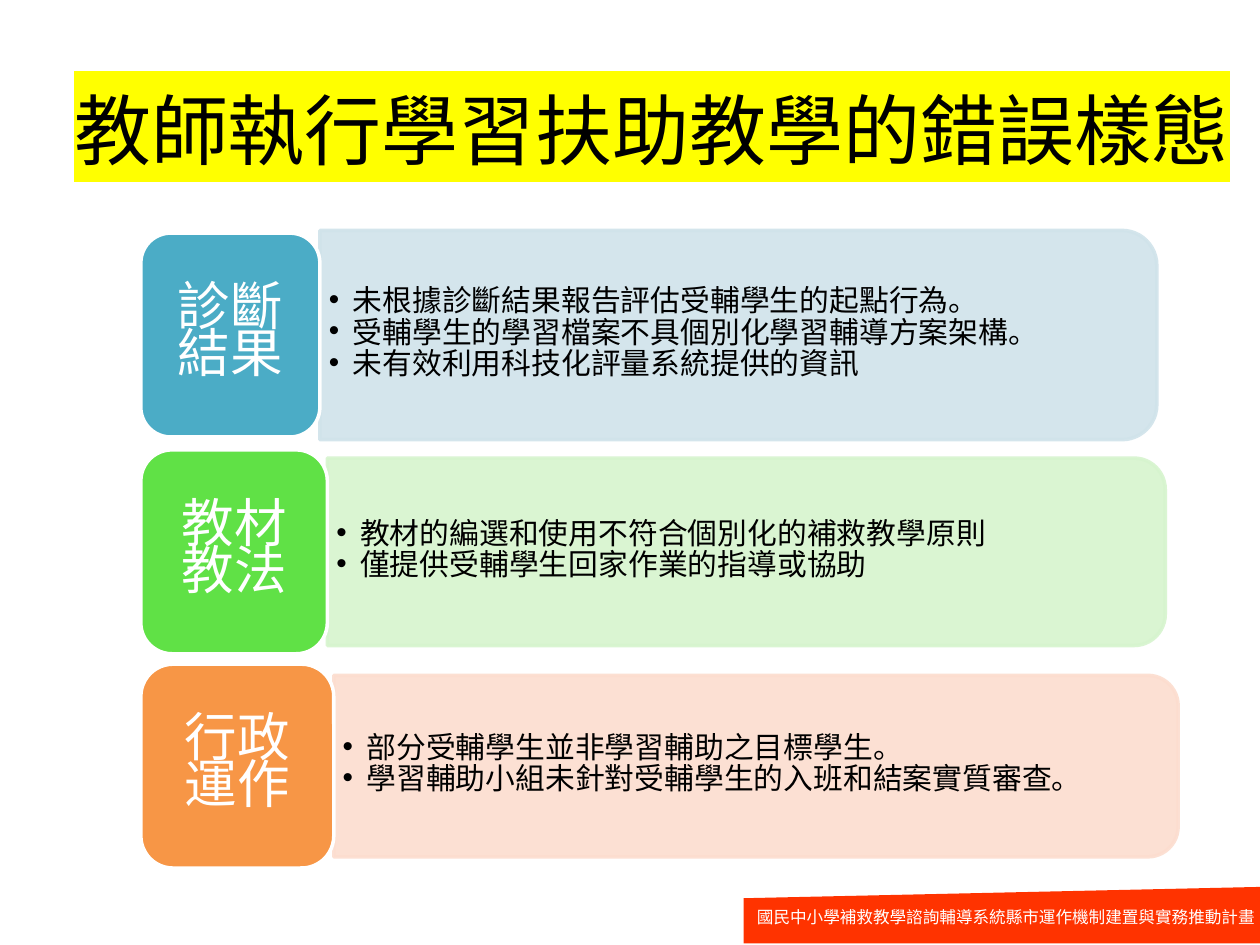
from lxml.etree import SubElement
from pptx import Presentation
from pptx.dml.color import RGBColor
from pptx.enum.shapes import MSO_SHAPE
from pptx.enum.text import MSO_ANCHOR, PP_ALIGN
from pptx.oxml.ns import qn
from pptx.util import Cm, Pt

FONT = "Noto Sans CJK JP"
LABEL_LEFT, LABEL_HEIGHT = 2.84, 4.11
ERROR_TYPES = [
    ("診斷結果", "4BACC6", "D0E3EA", 4.7, 3.61, (16.87, 4.22),
     ["未根據診斷結果報告評估受輔學生的起點行為。",
      "受輔學生的學習檔案不具個別化學習輔導方案架構。",
      "未有效利用科技化評量系統提供的資訊"]),
    ("教材教法", "60E146", "D6F4CE", 9.07, 3.76, (16.89, 3.78),
     ["教材的編選和使用不符合個別化的補救教學原則",
      "僅提供受輔學生回家作業的指導或協助"]),
    ("行政運作", "F79646", "FCDDCF", 13.39, 3.89, (17.02, 3.66),
     ["部分受輔學生並非學習輔助之目標學生。",
      "學習輔助小組未針對受輔學生的入班和結案實質審查。"]),
]


def rgb(value):
    """Turn a hex string into a colour."""
    return RGBColor.from_string(value)


def set_font(paragraph, size, color, highlight=None):
    """Set size, colour, typeface and optional highlight of a paragraph."""
    font = paragraph.font
    font.size = Pt(size)
    font.color.rgb = rgb(color)
    properties = paragraph._p.pPr.find(qn("a:defRPr"))
    if highlight:
        marker = SubElement(properties, qn("a:highlight"))
        SubElement(marker, qn("a:srgbClr"), val=highlight)
    for script in ("a:latin", "a:ea"):
        SubElement(properties, qn(script), typeface=FONT)


def set_frame(frame, horizontal=0.25, vertical=0.13, wrap=True):
    """Set insets and wrapping of a vertically centred text frame."""
    frame.word_wrap = wrap
    frame.vertical_anchor = MSO_ANCHOR.MIDDLE
    frame.margin_left = frame.margin_right = Cm(horizontal)
    frame.margin_top = frame.margin_bottom = Cm(vertical)


def add_filled(slide, preset, box, fill, line=None):
    """Add a preset shape with a solid fill and an optional outline."""
    shape = slide.shapes.add_shape(preset, *map(Cm, box))
    shape.shadow.inherit = False
    shape.fill.solid()
    shape.fill.fore_color.rgb = rgb(fill)
    if line:
        shape.line.color.rgb = rgb(line)
        shape.line.width = Pt(2)
    else:
        shape.line.fill.background()
    return shape


def add_title(slide, box, wording):
    """Place the highlighted heading."""
    frame = slide.shapes.add_textbox(*map(Cm, box)).text_frame
    set_frame(frame)
    heading = frame.paragraphs[0]
    heading.text = wording
    heading.alignment = PP_ALIGN.CENTER
    set_font(heading, 44, "000000", "FFFF00")


def add_band(slide, box, tint):
    """Place a translucent band rounded on its right side."""
    left, top, width, height = box
    shift = (width - height) / 2
    band = add_filled(slide, MSO_SHAPE.ROUND_2_SAME_RECTANGLE,
                      (left + shift, top - shift, height, width), tint, tint)
    band.rotation = 90
    for color in band._element.spPr.iter(qn("a:srgbClr")):
        SubElement(color, qn("a:alpha"), val="90000")


def add_findings(slide, box, findings):
    """Place the bulleted findings of one error type."""
    frame = slide.shapes.add_textbox(*map(Cm, box)).text_frame
    set_frame(frame, 0.18, 0.1)
    for index, finding in enumerate(findings):
        item = frame.add_paragraph() if index else frame.paragraphs[0]
        item.text = finding
        item.line_spacing = 0.75
        item.space_after = Pt(2.55)
        properties = item._p.get_or_add_pPr()
        properties.set("marL", str(Cm(0.48)))
        properties.set("indent", str(-Cm(0.48)))
        SubElement(properties, qn("a:buFont"), typeface="Arial")
        SubElement(properties, qn("a:buChar"), char="•")
        set_font(item, 17, "000000")


def add_error_type(slide, box, name, fill, tint, band_size, findings):
    """Place one row: a label, its band centred beside it and the findings."""
    left, top, width, height = box
    band_width, band_height = band_size
    band_box = (left + width, top + (height - band_height) / 2,
                band_width, band_height)
    add_band(slide, band_box, tint)
    add_findings(slide, band_box, findings)
    label = add_filled(slide, MSO_SHAPE.ROUNDED_RECTANGLE, box, fill, "FFFFFF")
    set_frame(label.text_frame, 0.3, 0.15)
    caption = label.text_frame.paragraphs[0]
    caption.text = name
    caption.alignment = PP_ALIGN.CENTER
    caption.line_spacing = 0.75
    set_font(caption, 30, "FFFFFF")


def add_footer(slide, box, project):
    """Place the slanted project tag."""
    left, top, width, height = box
    add_filled(slide, MSO_SHAPE.FLOWCHART_MANUAL_INPUT, box, "FF3300")
    frame = slide.shapes.add_textbox(
        Cm(left + 0.02), Cm(top + 0.25), Cm(width + 1.17), Cm(0.69)).text_frame
    set_frame(frame, wrap=False)
    tag = frame.paragraphs[0]
    tag.text = project
    tag.alignment = PP_ALIGN.LEFT
    set_font(tag, 9.5, "FFFFFF")


def main():
    """Build the slide and save it."""
    deck = Presentation()
    deck.slide_width, deck.slide_height = Cm(25.4), Cm(19.05)
    slide = deck.slides.add_slide(deck.slide_layouts[6])
    add_footer(slide, (14.99, 17.88, 10.41, 1.14),
               "國民中小學補救教學諮詢輔導系統縣市運作機制建置與實務推動計畫")
    add_title(slide, (0.89, 0.33, 24.51, 4.55), "教師執行學習扶助教學的錯誤樣態")
    for name, fill, tint, top, width, band_size, findings in ERROR_TYPES:
        add_error_type(slide, (LABEL_LEFT, top, width, LABEL_HEIGHT),
                       name, fill, tint, band_size, findings)
    deck.save("out.pptx")


if __name__ == "__main__":
    main()
